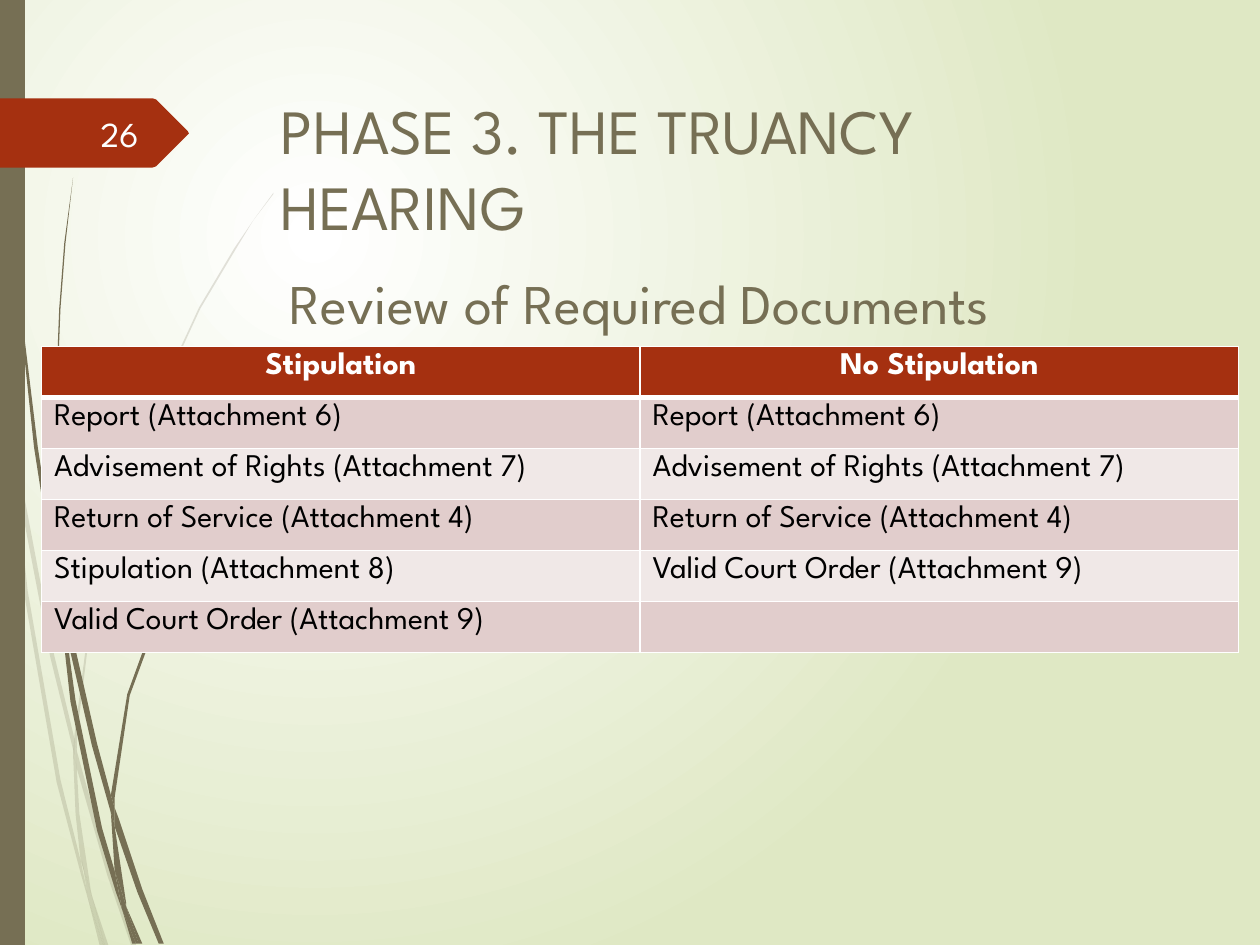
from lxml.etree import SubElement
from pptx import Presentation
from pptx.dml.color import RGBColor
from pptx.enum.text import MSO_ANCHOR, PP_ALIGN
from pptx.oxml.ns import qn
from pptx.util import Emu, Pt

PX = 9144  # EMU per px, 100 px to the inch
FONT = "League Spartan"
COLORS = {
    "olive": "766F54", "rust": "A53010", "white": "FFFFFF", "number": "FEFFFF",
    "black": "000000", "green": "DFE8C4", "band dark": "E1CDCC", "band light": "F0E8E7",
}

# Outlines of the grass blades, as corner points in px
PALE_BLADES = [
    [(8, 350), (6, 322), (0, 282), (0, 299), (7, 344)],
    [(40, 522), (59, 599), (59, 586), (43, 520), (10, 345), (12, 376)],
    [(64, 607), (61, 596), (61, 610), (85, 694), (104, 750), (108, 750), (88, 692)],
    [(83, 750), (86, 750), (73, 711)],
    [(64, 683), (48, 619), (22, 469), (12, 376), (8, 350), (19, 470), (45, 621),
     (64, 693), (70, 714), (69, 707)],
    [(58, 599), (60, 646), (64, 683), (67, 692), (73, 711), (72, 706), (63, 646),
     (61, 610), (61, 608)],
    [(61, 584), (76, 462), (111, 349), (159, 245), (187, 198), (201, 175), (217, 154),
     (217, 153), (201, 175), (186, 197), (158, 244), (110, 348), (75, 461), (59, 584),
     (59, 586), (61, 596)],
    [(70, 714), (79, 750), (82, 750)],
    [(61, 608), (61, 610), (61, 596), (59, 586), (58, 599)],
    [(67, 692), (65, 683), (69, 707), (70, 714), (82, 750), (83, 750), (73, 711)],
]
DARK_BLADES = [
    [(5, 110), (14, 233), (27, 355), (46, 477), (47, 481), (45, 457), (45, 453),
     (30, 355), (15, 232), (6, 109), (4, 48), (3, 0), (2, 0), (3, 48)],
    [(73, 592), (88, 645), (88, 633), (88, 631), (77, 590), (50, 472), (53, 505)],
    [(94, 649), (91, 641), (91, 656), (109, 708), (126, 749), (130, 749), (113, 706)],
    [(91, 691), (81, 657), (60, 556), (53, 505), (47, 477), (56, 557), (77, 659),
     (92, 708), (97, 722), (96, 717)],
    [(50, 472), (48, 453), (44, 349), (48, 245), (52, 193), (58, 141), (51, 193),
     (47, 245), (43, 349), (45, 449), (49, 472)],
    [(110, 749), (113, 749), (100, 719)],
    [(47, 477), (53, 505), (50, 472), (49, 472), (45, 449), (45, 453)],
    [(91, 633), (103, 552), (131, 476), (169, 406), (191, 374), (203, 359), (216, 344),
     (215, 344), (203, 358), (191, 373), (168, 405), (129, 474), (101, 551), (88, 631),
     (91, 641)],
    [(97, 722), (105, 749), (108, 749)],
    [(88, 645), (91, 691), (96, 706), (100, 719), (100, 716), (91, 656), (90, 651)],
    [(88, 645), (90, 651), (91, 656), (91, 641), (88, 631), (88, 633)],
    [(96, 706), (91, 691), (96, 717), (97, 722), (108, 749), (110, 749), (100, 719)],
]
SIDE_BAR = [(0, 0), (20, 0), (20, 750), (0, 750)]
NUMBER_TAG = [(0, 78), (121, 78), (124, 79), (149, 104), (150, 106), (149, 107),
              (124, 132), (121, 133), (0, 133)]

DOCUMENTS = [
    ("Stipulation", "No Stipulation"),
    ("Report (Attachment 6)", "Report (Attachment 6)"),
    ("Advisement of Rights (Attachment 7)", "Advisement of Rights (Attachment 7)"),
    ("Return of Service (Attachment 4)", "Return of Service (Attachment 4)"),
    ("Stipulation (Attachment 8)", "Valid Court Order (Attachment 9)"),
    ("Valid Court Order (Attachment 9)", ""),
]


def px(*lengths):
    return [Emu(length * PX) for length in lengths]


def rgb(name):
    return RGBColor.from_string(COLORS[name])


def set_attributes(target, values):
    for name, value in values.items():
        setattr(target, name, value)


def paint_background(slide):
    """Fill the slide with a round gradient centred in its upper left quarter."""
    fill = slide.background.fill
    fill.gradient()
    for stop, color in zip(fill.gradient_stops, ("white", "green")):
        stop.color.rgb = rgb(color)
    gradient = slide.element.find(".//" + qn("a:gradFill"))
    gradient.remove(gradient.find(qn("a:lin")))
    circle = SubElement(gradient, qn("a:path"), path="circle")
    SubElement(circle, qn("a:fillToRect"), l="50000", t="50000", r="100000", b="100000")


def style_shape(shape, color, opacity=100):
    shape.shadow.inherit = False
    shape.line.fill.background()
    shape.fill.solid()
    shape.fill.fore_color.rgb = rgb(color)
    if opacity < 100:
        tone = shape.element.spPr.find(".//" + qn("a:srgbClr"))
        SubElement(tone, qn("a:alpha"), val=str(opacity * 1000))


def add_outline(slide, points, color, opacity=100):
    builder = slide.shapes.build_freeform(*points[0], scale=PX)
    builder.add_line_segments(points[1:], close=True)
    style_shape(builder.convert_to_shape(), color, opacity)


def write(paragraph, text, size, color, bold=False, **layout):
    set_attributes(paragraph, layout)
    run = paragraph.add_run()
    run.text = text
    set_attributes(run.font, {"name": FONT, "size": Pt(size), "bold": bold})
    run.font.color.rgb = rgb(color)


def add_text(slide, box, text, size, color, anchor=MSO_ANCHOR.TOP, **layout):
    frame = slide.shapes.add_textbox(*px(*box)).text_frame
    set_attributes(frame, {"word_wrap": True, "vertical_anchor": anchor})
    write(frame.paragraphs[0], text, size, color, **layout)


def add_borders(cell, bottom_width):
    properties = cell._tc.get_or_add_tcPr()
    widths = {"a:lnL": 1, "a:lnR": 1, "a:lnT": 1, "a:lnB": bottom_width}
    for position, (side, width) in enumerate(widths.items()):
        line = SubElement(properties, qn(side), w=str(Pt(width)))
        properties.insert(position, line)
        fill = SubElement(line, qn("a:solidFill"))
        SubElement(fill, qn("a:srgbClr"), val=COLORS["white"])


def add_documents_table(slide, box):
    table = slide.shapes.add_table(len(DOCUMENTS), len(DOCUMENTS[0]), *px(*box)).table
    for row, texts in enumerate(DOCUMENTS):
        header = row == 0
        band = "rust" if header else ("band light", "band dark")[row % 2]
        for column, text in enumerate(texts):
            cell = table.cell(row, column)
            cell.fill.solid()
            cell.fill.fore_color.rgb = rgb(band)
            add_borders(cell, 3 if header else 1)
            if text:
                write(cell.text_frame.paragraphs[0], text, 18,
                      "white" if header else "black", bold=header,
                      alignment=PP_ALIGN.CENTER if header else PP_ALIGN.LEFT)


def main():
    presentation = Presentation()
    width, height = px(1000, 750)
    set_attributes(presentation, {"slide_width": width, "slide_height": height})
    slide = presentation.slides.add_slide(presentation.slide_layouts[6])

    paint_background(slide)
    for blade in PALE_BLADES:
        add_outline(slide, blade, "olive", opacity=20)
    for blade in DARK_BLADES:
        add_outline(slide, blade, "olive")
    add_outline(slide, SIDE_BAR, "olive")
    add_outline(slide, NUMBER_TAG, "rust")

    add_text(slide, (213, 68, 721, 140), "PHASE 3. THE TRUANCY HEARING", 36, "olive")
    add_documents_table(slide, (33, 275, 950, 243))
    add_text(slide, (33, 208, 950, 100), "Review of Required Documents", 32, "olive",
             alignment=PP_ALIGN.CENTER, space_before=Pt(6.4))
    add_text(slide, (56, 86, 64, 40), "26", 20, "number", anchor=MSO_ANCHOR.MIDDLE,
             alignment=PP_ALIGN.RIGHT)
    presentation.save("out.pptx")


if __name__ == "__main__":
    main()
